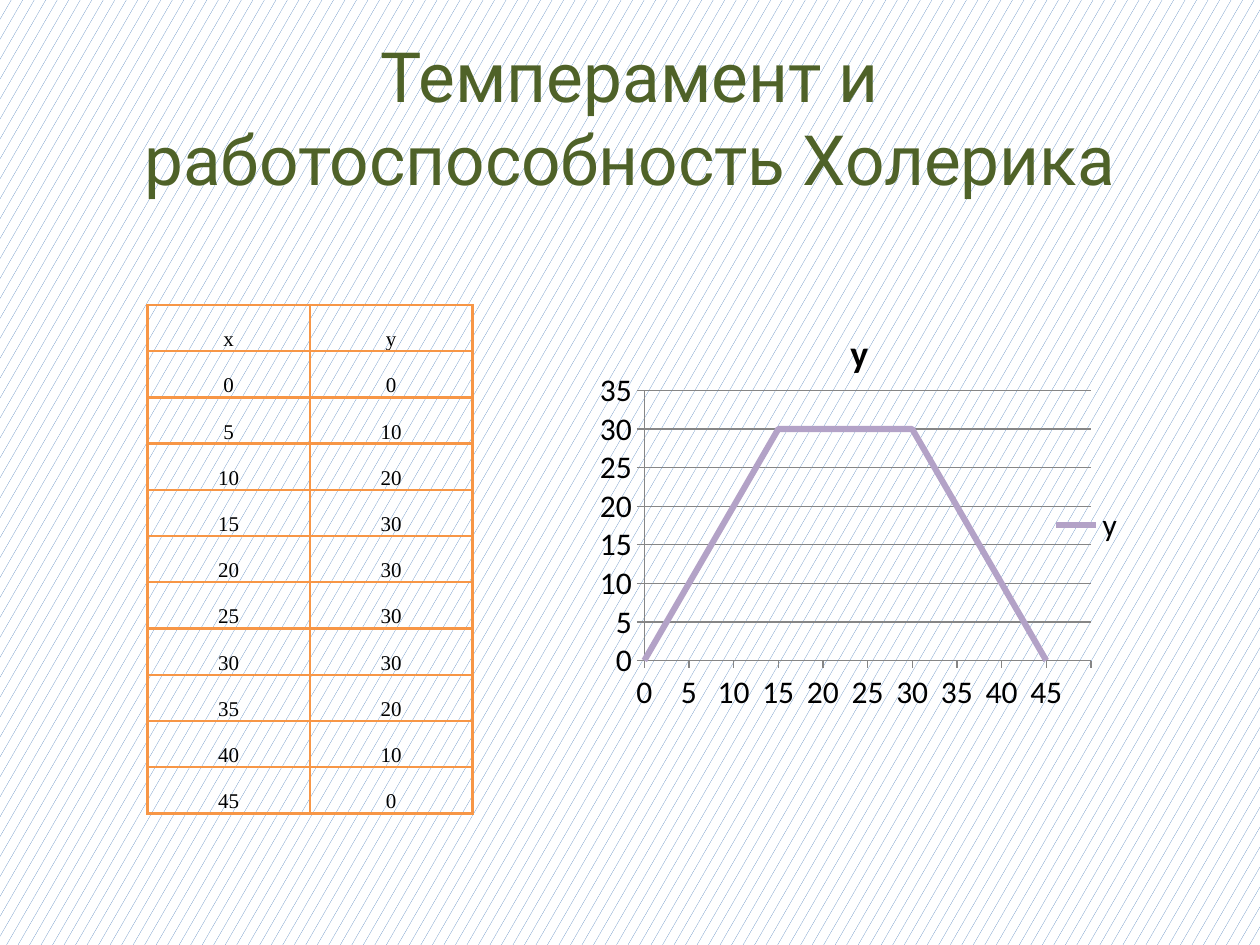
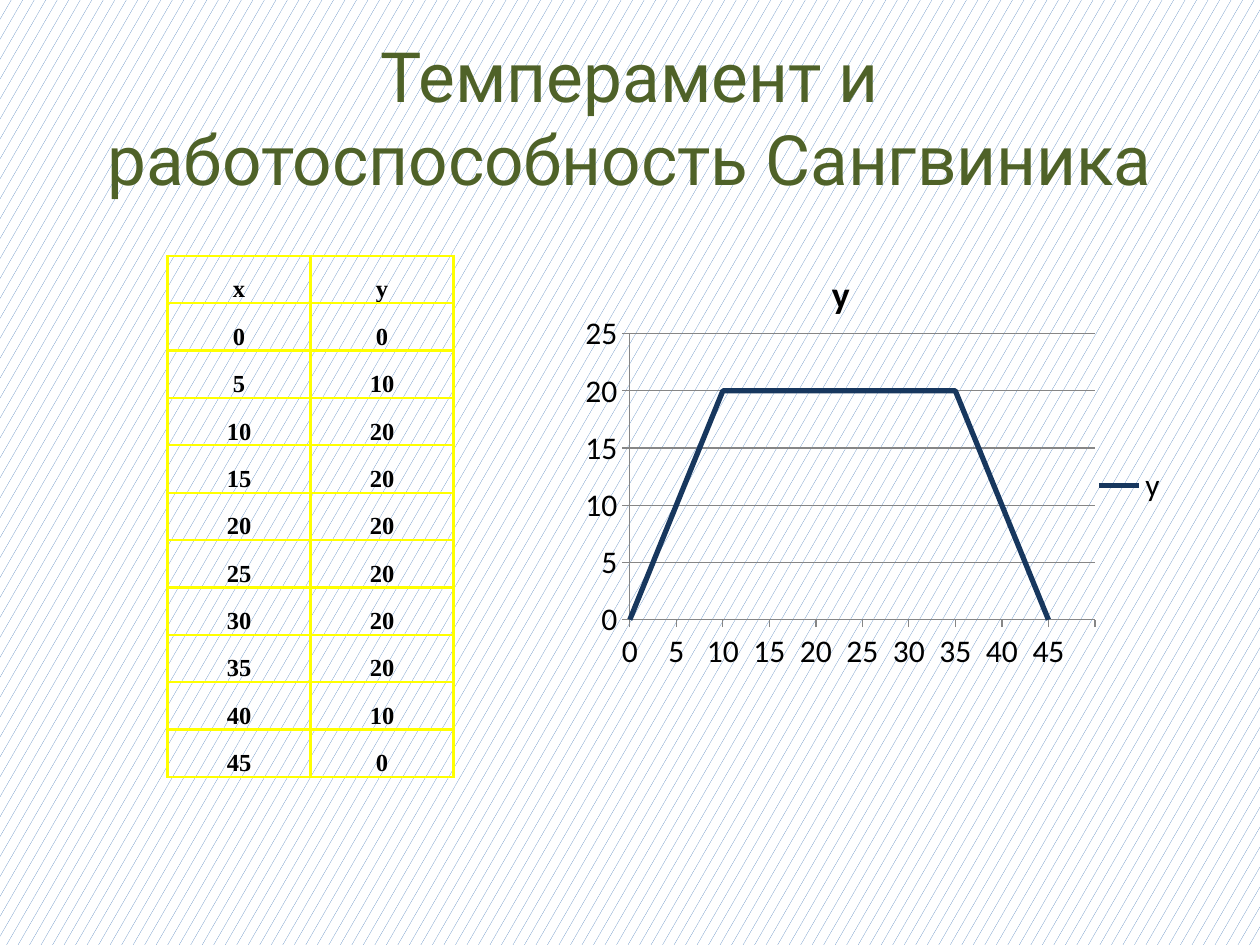
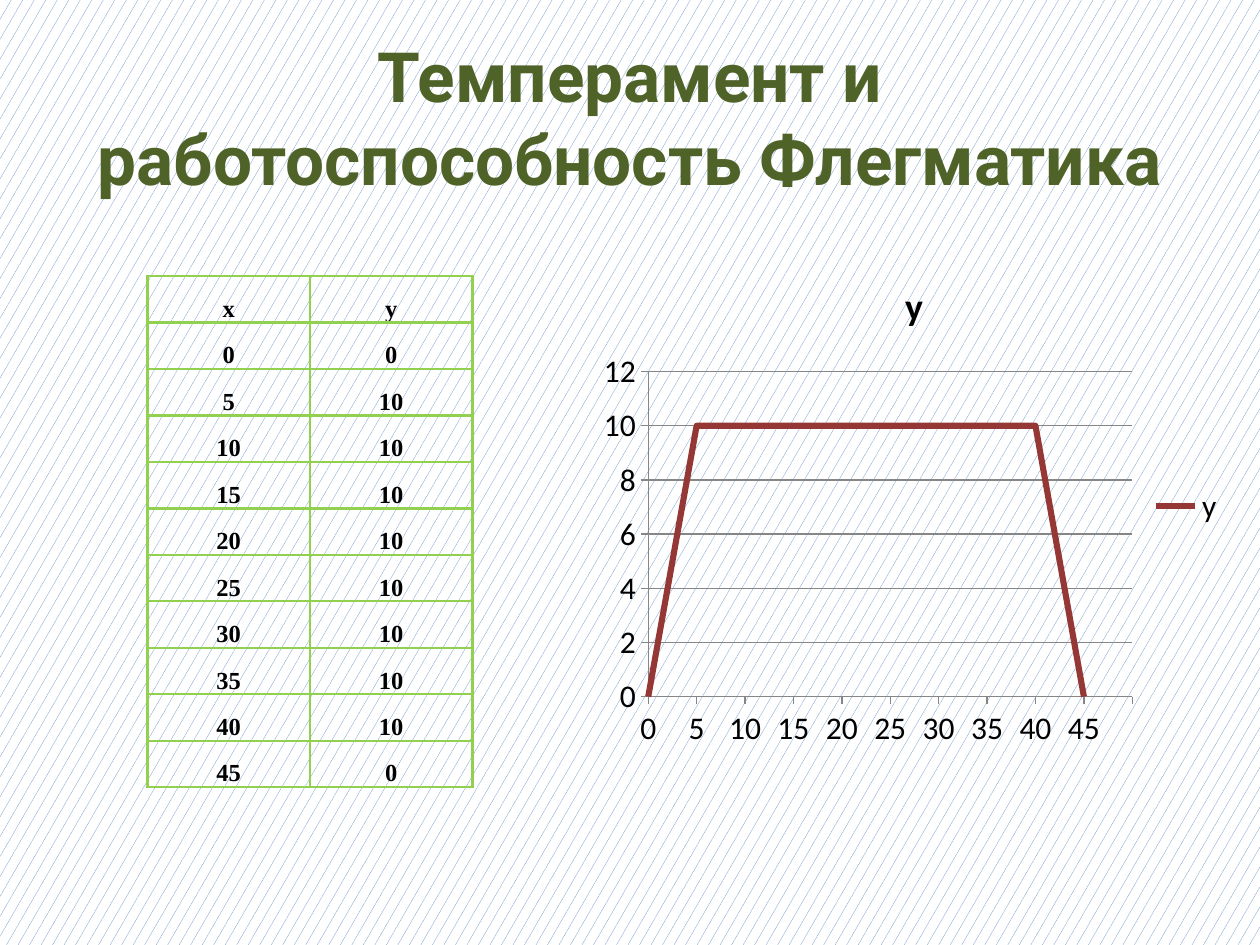
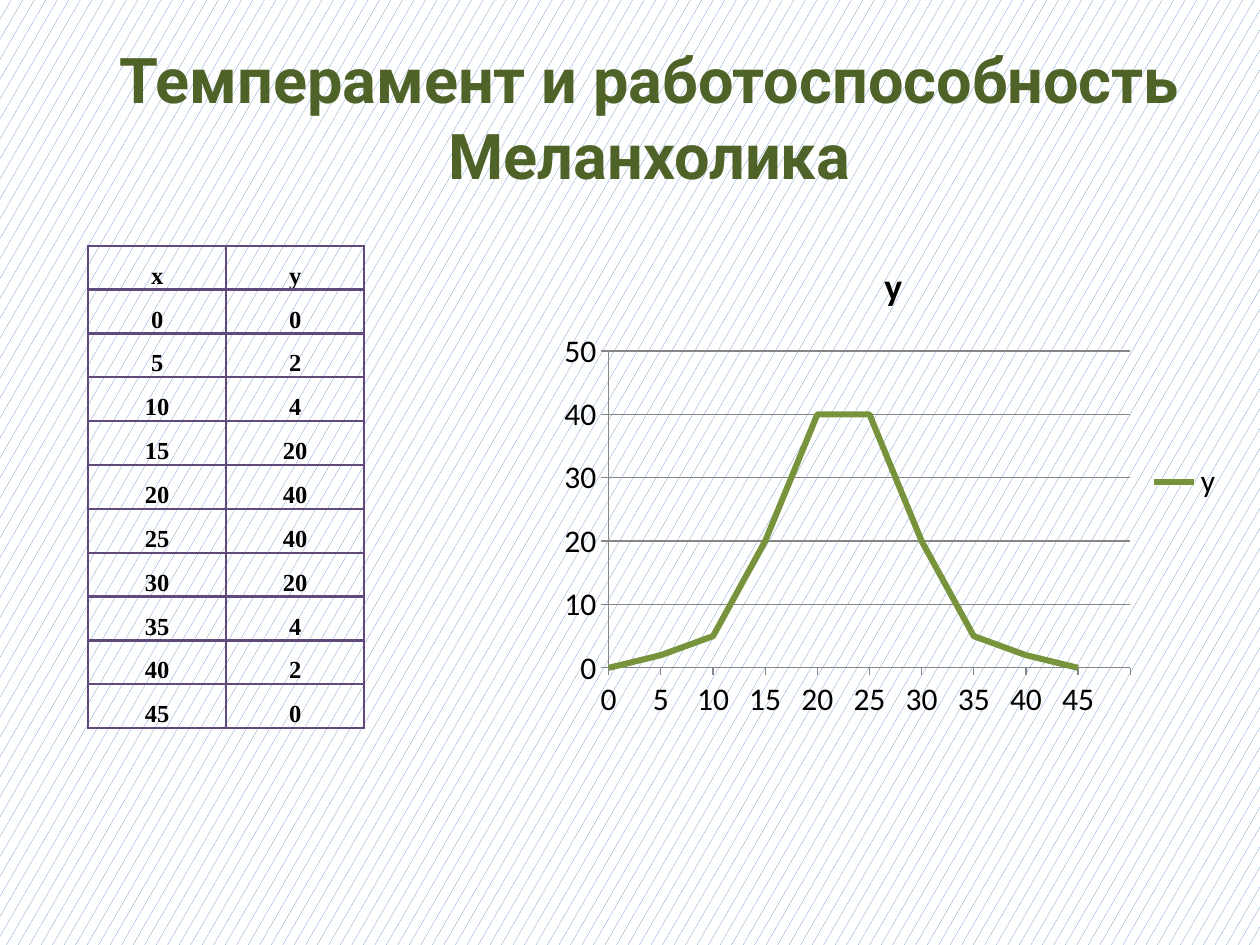
import pptx
import pptx.chart.data
import pptx.dml.color
import pptx.enum.chart
import pptx.enum.dml
import pptx.enum.text
import pptx.oxml
import pptx.oxml.ns
import pptx.util
from lxml import etree

Inches, Pt = pptx.util.Inches, pptx.util.Pt
RGBColor = pptx.dml.color.RGBColor
qn = pptx.oxml.ns.qn

# Shared style
WHITE = RGBColor(0xFF, 0xFF, 0xFF)
BLACK = RGBColor(0x00, 0x00, 0x00)
PATTERN_BLUE = RGBColor(0x4F, 0x81, 0xBD)
TITLE_GREEN = RGBColor(0x4F, 0x62, 0x28)
GRID_GREY = RGBColor(0x86, 0x86, 0x86)
ORANGE = RGBColor(0xF7, 0x96, 0x46)
YELLOW = RGBColor(0xFF, 0xFF, 0x00)
LIME = RGBColor(0x92, 0xD0, 0x50)
VIOLET = RGBColor(0x60, 0x49, 0x7B)
LILAC = RGBColor(0xB3, 0xA2, 0xC7)
NAVY = RGBColor(0x17, 0x37, 0x5E)
BRICK = RGBColor(0x95, 0x37, 0x35)
OLIVE = RGBColor(0x77, 0x93, 0x3C)
TITLE_FONT, TABLE_FONT, CHART_FONT = "Roboto", "Times New Roman", "Calibri"

# Content: boxes are left, top, width, height in inches
MINUTES = list(range(0, 50, 5))
TEMPERAMENTS = [
    {
        "who": "Холерика", "title_size": 39.6, "title_bold": False, "title_width": 9,
        "work": [0, 10, 20, 30, 30, 30, 30, 20, 10, 0],
        "table_box": (1.17, 2.42, 2.58, 4.04), "border": ORANGE,
        "table_size": 12, "table_bold": False,
        "chart_box": (4.61, 2.41, 4.42, 3.52), "curve": LILAC, "curve_width": 3.5,
        "plot_area": {"x": 0.114, "y": 0.196, "w": 0.802, "h": 0.609},
    },
    {
        "who": "Сангвиника", "title_size": 39.6, "title_bold": False, "title_width": 9,
        "work": [0, 10, 20, 20, 20, 20, 20, 20, 10, 0],
        "table_box": (1.33, 2.03, 2.27, 4.14), "border": YELLOW,
        "table_size": 14, "table_bold": True,
        "chart_box": (3.98, 1.94, 5.39, 3.83), "curve": NAVY, "curve_width": 3,
        "plot_area": {"x": 0.189, "y": 0.185, "w": 0.685, "h": 0.593},
    },
    {
        "who": "Флегматика", "title_size": 39.6, "title_bold": True, "title_width": 9,
        "work": [0, 10, 10, 10, 10, 10, 10, 10, 10, 0],
        "table_box": (1.17, 2.19, 2.58, 4.06), "border": LIME,
        "table_size": 14, "table_bold": True,
        "chart_box": (4.69, 2.03, 5.13, 3.98), "curve": BRICK, "curve_width": 3.5,
    },
    {
        "who": "Меланхолика", "title_size": 36, "title_bold": True, "title_width": 9.31,
        "work": [0, 2, 4, 20, 40, 40, 20, 4, 2, 0],
        "plotted": [0, 2, 5, 20, 40, 40, 20, 5, 2, 0],
        "table_box": (0.7, 1.95, 2.19, 3.83), "border": VIOLET,
        "table_size": 14, "table_bold": True,
        "chart_box": (4.37, 1.87, 5.44, 3.91), "curve": OLIVE, "curve_width": 3.5,
    },
]


def set_font(font, name, size, color, bold):
    font.name, font.size, font.bold = name, Pt(size), bold
    font.color.rgb = color


def paint_background(slide):
    fill = slide.background.fill
    fill.patterned()
    fill.pattern = pptx.enum.dml.MSO_PATTERN.SMALL_CONFETTI
    fill.fore_color.rgb = PATTERN_BLUE
    fill.back_color.rgb = WHITE


def add_title(slide, item):
    box = slide.shapes.add_textbox(
        Inches(0.5), Inches(0.3), Inches(item["title_width"]), Inches(1.25))
    frame = box.text_frame
    frame.word_wrap = True
    frame.vertical_anchor = pptx.enum.text.MSO_ANCHOR.MIDDLE
    frame.text = f"Темперамент и работоспособность {item['who']}"
    heading = frame.paragraphs[0]
    heading.alignment = pptx.enum.text.PP_ALIGN.CENTER
    set_font(heading.runs[0].font, TITLE_FONT, item["title_size"],
             TITLE_GREEN, item["title_bold"])


def add_borders(cell, color):
    properties = cell._tc.get_or_add_tcPr()
    for position, side in enumerate(("lnL", "lnR", "lnT", "lnB")):
        line = etree.Element(qn(f"a:{side}"), w=str(Pt(1.5)))
        fill = etree.SubElement(line, qn("a:solidFill"))
        etree.SubElement(fill, qn("a:srgbClr"), val=str(color))
        properties.insert(position, line)


def add_value_table(slide, item):
    rows = [("x", "y"), *zip(MINUTES, item["work"])]
    box = [Inches(length) for length in item["table_box"]]
    table = slide.shapes.add_table(len(rows), 2, *box).table
    table.first_row = table.horz_banding = False
    for column in table.columns:
        column.width = box[2] // 2
    for row, values in zip(table.rows, rows):
        row.height = box[3] // len(rows)
        for cell, value in zip(row.cells, values):
            cell.margin_left = cell.margin_right = 0
            cell.margin_top = cell.margin_bottom = 0
            cell.vertical_anchor = pptx.enum.text.MSO_ANCHOR.BOTTOM
            cell.fill.background()
            add_borders(cell, item["border"])
            cell.text_frame.text = str(value)
            paragraph = cell.text_frame.paragraphs[0]
            paragraph.alignment = pptx.enum.text.PP_ALIGN.CENTER
            set_font(paragraph.runs[0].font, TABLE_FONT, item["table_size"],
                     BLACK, item["table_bold"])


def place_plot_area(chart, area):
    plot_area = chart._chartSpace.chart.plotArea
    for old in plot_area.findall(qn("c:layout")):
        plot_area.remove(old)
    layout = etree.Element(qn("c:layout"))
    manual = etree.SubElement(layout, qn("c:manualLayout"))
    settings = {"layoutTarget": "inner", "xMode": "edge", "yMode": "edge", **area}
    for tag, value in settings.items():
        etree.SubElement(manual, qn(f"c:{tag}"), val=str(value))
    plot_area.insert(0, layout)


def start_curve_on_axis(value_axis):
    element = value_axis._element
    crossing = element.find(qn("c:crossBetween"))
    if crossing is None:
        crossing = etree.Element(qn("c:crossBetween"))
        element.find(qn("c:crosses")).addnext(crossing)
    crossing.set("val", "midCat")


def add_work_chart(slide, item):
    # The last, unnamed category leaves room to the right of the curve
    data = pptx.chart.data.CategoryChartData()
    data.categories = [str(minute) for minute in MINUTES] + [""]
    data.add_series("y", item.get("plotted", item["work"]) + [None])
    chart = slide.shapes.add_chart(
        pptx.enum.chart.XL_CHART_TYPE.LINE,
        *[Inches(length) for length in item["chart_box"]], data).chart
    set_font(chart.font, CHART_FONT, 18, BLACK, False)

    chart.has_title = True
    chart.chart_title.include_in_layout = False
    chart.chart_title.text_frame.text = "y"
    set_font(chart.chart_title.text_frame.paragraphs[0].runs[0].font,
             CHART_FONT, 21.6, BLACK, True)
    chart.has_legend = True
    chart.legend.position = pptx.enum.chart.XL_LEGEND_POSITION.RIGHT
    chart.legend.include_in_layout = False

    for axis in (chart.category_axis, chart.value_axis):
        axis.major_tick_mark = pptx.enum.chart.XL_TICK_MARK.OUTSIDE
        axis.minor_tick_mark = pptx.enum.chart.XL_TICK_MARK.NONE
        axis.format.line.color.rgb = GRID_GREY
        axis.format.line.width = Pt(0.75)
    chart.value_axis.has_major_gridlines = True
    gridline = chart.value_axis.major_gridlines.format.line
    gridline.color.rgb, gridline.width = GRID_GREY, Pt(0.75)
    start_curve_on_axis(chart.value_axis)

    chart.plots[0].vary_by_categories = False
    curve = chart.plots[0].series[0]
    curve.smooth = False
    curve.marker.style = pptx.enum.chart.XL_MARKER_STYLE.NONE
    curve.format.line.color.rgb = item["curve"]
    curve.format.line.width = Pt(item["curve_width"])
    if "plot_area" in item:
        place_plot_area(chart, item["plot_area"])


def main():
    presentation = pptx.Presentation()
    presentation.slide_width, presentation.slide_height = Inches(10), Inches(7.5)
    for item in TEMPERAMENTS:
        slide = presentation.slides.add_slide(presentation.slide_layouts[6])
        paint_background(slide)
        add_title(slide, item)
        add_work_chart(slide, item)
        add_value_table(slide, item)
    presentation.save("out.pptx")


if __name__ == "__main__":
    main()
